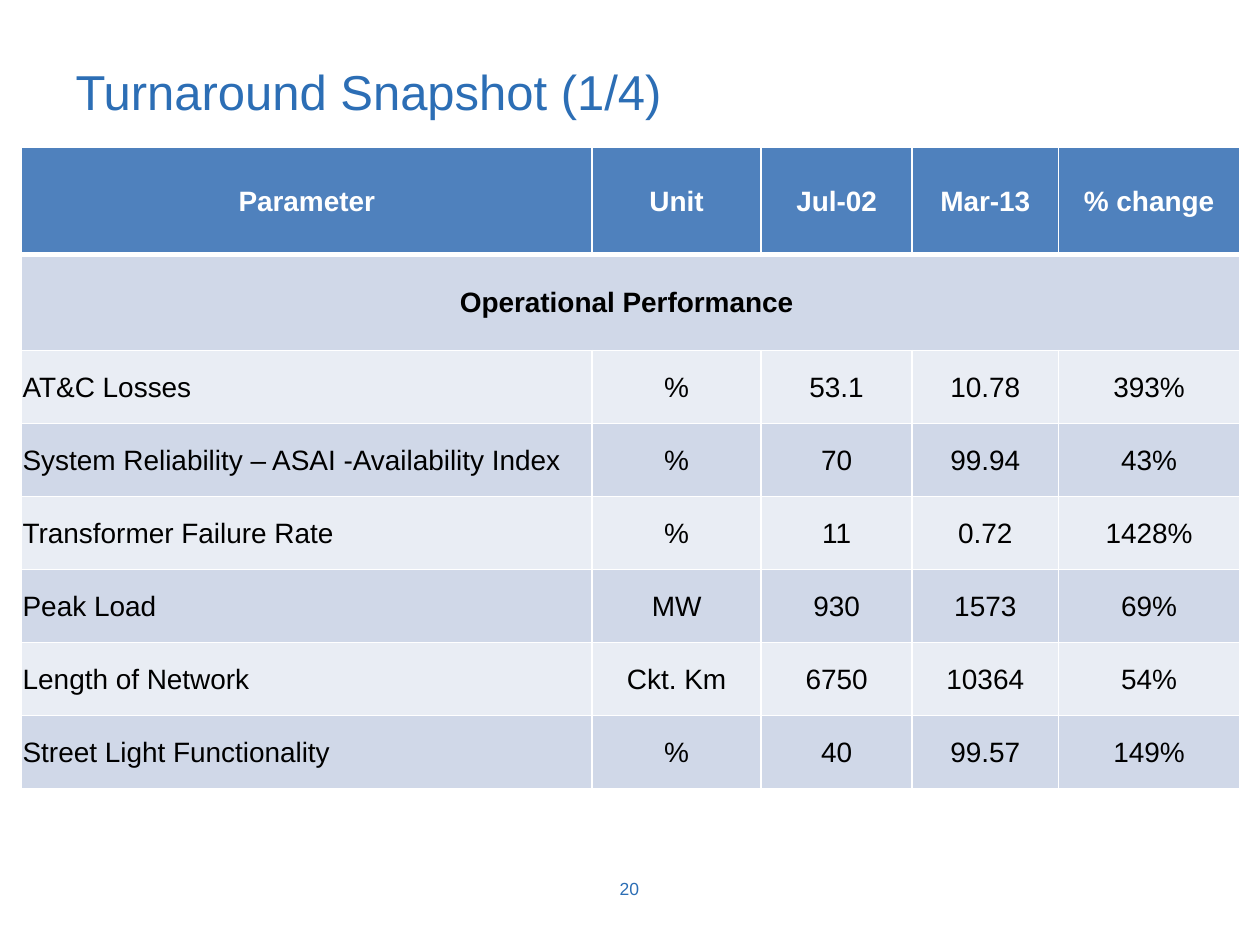
"""Build the turnaround snapshot slide with its table of operational performance."""
from dataclasses import dataclass

from lxml import etree
from pptx import Presentation
from pptx.dml.color import RGBColor
from pptx.enum.text import MSO_ANCHOR, PP_ALIGN
from pptx.oxml.ns import qn
from pptx.table import Table, _Cell
from pptx.text.text import TextFrame
from pptx.util import Inches, Pt

MIDDLE = MSO_ANCHOR.MIDDLE
LEFT, CENTER, JUSTIFY = PP_ALIGN.LEFT, PP_ALIGN.CENTER, PP_ALIGN.JUSTIFY
FONT = "Arial"
BLUE, WHITE, BLACK = "2C6EB5", "FFFFFF", "000000"
HEADER_FILL, BANDS = "4F81BD", ("E9EDF4", "D0D8E8")
THIN, THICK = 1, 3
COLUMN_WIDTHS = (4.53, 1.34, 1.2, 1.16, 1.44)
HEADER_HEIGHT, SECTION_HEIGHT, ROW_HEIGHT = 0.85, 0.76, 0.58
HEADERS = ("Parameter", "Unit", "Jul-02", "Mar-13", "% change")
SECTION = "Operational Performance "


@dataclass
class Measure:
    parameter: str
    unit: str
    before: str
    after: str
    change: str

    def values(self) -> tuple[str, ...]:
        return self.parameter, self.unit, self.before, self.after, self.change


MEASURES = (
    Measure("AT&C Losses", "%", "53.1", "10.78", "393%"),
    Measure("System Reliability – ASAI -Availability Index", "%", "70", "99.94", "43%"),
    Measure("Transformer Failure Rate", "%", "11", "0.72", "1428%"),
    Measure("Peak Load", "MW", "930", "1573", "69%"),
    Measure("Length of Network", "Ckt. Km", "6750", "10364", "54%"),
    Measure("Street Light Functionality", "%", "40", "99.57", "149%"),
)


def rgb(color: str) -> RGBColor:
    return RGBColor.from_string(color)


def write(tf: TextFrame, text: str, size: float, color: str,
          align: PP_ALIGN = CENTER, bold: bool = False) -> None:
    p = tf.paragraphs[0]
    p.text = text
    p.alignment = align
    p.font.name, p.font.size, p.font.bold = FONT, Pt(size), bold
    p.font.color.rgb = rgb(color)


def set_borders(cell: _Cell, top: float, bottom: float) -> None:
    props = cell._tc.get_or_add_tcPr()
    sides = (("a:lnL", THIN), ("a:lnR", THIN), ("a:lnT", top), ("a:lnB", bottom))
    for tag, width in sides:
        line = etree.SubElement(props, qn(tag), w=str(Pt(width)))
        fill = etree.SubElement(line, qn("a:solidFill"))
        etree.SubElement(fill, qn("a:srgbClr"), val=WHITE)


def format_cell(cell: _Cell, text: str, fill: str, color: str = BLACK,
                align: PP_ALIGN = CENTER, bold: bool = False,
                top: float = THIN, bottom: float = THIN) -> None:
    set_borders(cell, top, bottom)
    cell.fill.solid()
    cell.fill.fore_color.rgb = rgb(fill)
    cell.vertical_anchor = MIDDLE
    cell.margin_left = cell.margin_right = cell.margin_top = Inches(0.01)
    cell.margin_bottom = 0
    write(cell.text_frame, text, 16, color, align, bold)


def fill_table(table: Table) -> None:
    for column, width in zip(table.columns, COLUMN_WIDTHS):
        column.width = Inches(width)
    heights = (HEADER_HEIGHT, SECTION_HEIGHT) + (ROW_HEIGHT,) * len(MEASURES)
    for row, height in zip(table.rows, heights):
        row.height = Inches(height)
    for col, header in enumerate(HEADERS):
        format_cell(table.cell(0, col), header, HEADER_FILL, WHITE, bold=True, bottom=THICK)
        format_cell(table.cell(1, col), "" if col else SECTION, BANDS[1], bold=True, top=THICK)
    table.cell(1, 0).merge(table.cell(1, len(HEADERS) - 1))
    for index, measure in enumerate(MEASURES):
        for col, value in enumerate(measure.values()):
            format_cell(table.cell(index + 2, col), value, BANDS[index % 2],
                        align=CENTER if col else JUSTIFY)


def main() -> None:
    prs = Presentation()
    prs.slide_width, prs.slide_height = Inches(10), Inches(7.5)
    s = prs.slides.add_slide(prs.slide_layouts[5])

    title = s.shapes.title
    title.left, title.top = Inches(0.5), Inches(0.3)
    title.width, title.height = Inches(9), Inches(0.78)
    tf = title.text_frame
    tf.vertical_anchor = MIDDLE
    write(tf, "Turnaround Snapshot (1/4)", 28, BLUE, LEFT)
    tf.paragraphs[0].line_spacing = 1.15
    tf.paragraphs[0].space_after = Pt(10)

    number = s.shapes.add_textbox(Inches(3.83), Inches(6.85), Inches(2.33), Inches(0.4))
    tf = number.text_frame
    tf.word_wrap = True
    tf.vertical_anchor = MIDDLE
    write(tf, "20", 10, BLUE)

    frame = s.shapes.add_table(len(MEASURES) + 2, len(HEADERS), Inches(0.17), Inches(1.17),
                               Inches(sum(COLUMN_WIDTHS)), Inches(5.08))
    fill_table(frame.table)
    prs.save("out.pptx")


if __name__ == "__main__":
    main()
